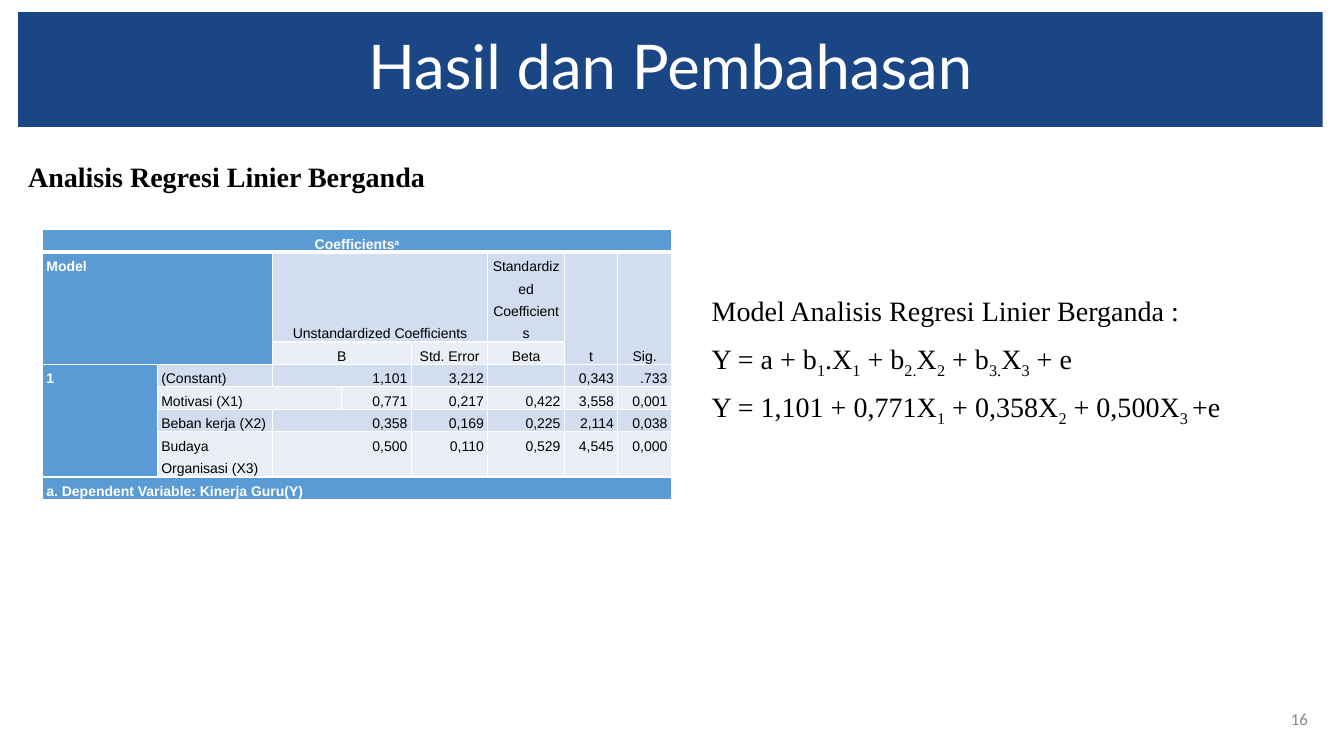
from lxml.etree import SubElement
from pptx import Presentation
from pptx.dml.color import RGBColor
from pptx.enum.shapes import MSO_SHAPE as Shape
from pptx.enum.text import MSO_ANCHOR as Anchor, PP_ALIGN as Align
from pptx.oxml.ns import qn
from pptx.util import Inches, Pt

NAVY, BLUE, PALE, PALER = "1B4685", "5B9BD5", "D2DEEF", "EAEFF7"
WHITE, BLACK, GREY = "FFFFFF", "000000", "888888"
SERIF = "Times New Roman"


def color(value):
    return RGBColor.from_string(value)


def paint(target, value):
    target.fill.solid()
    target.fill.fore_color.rgb = color(value)


def write(paragraph, text, *, size, font, ink=BLACK, bold=False, align=Align.LEFT,
          spacing=None, before=0, indent=0, right_indent=0, baseline=-25):
    """Fill a paragraph; pieces between bars are shifted by baseline percent."""
    paragraph.alignment = align
    paragraph.line_spacing = spacing
    paragraph.space_before = Pt(before)
    properties = paragraph._p.get_or_add_pPr()
    properties.set("marL", str(Inches(indent)))
    properties.set("marR", str(Inches(right_indent)))
    properties.set("indent", "0")
    for number, piece in enumerate(text.split("|")):
        if not piece:
            continue
        run = paragraph.add_run()
        run.text = piece
        run.font.name, run.font.size, run.font.bold = font, Pt(size), bold
        run.font.color.rgb = color(ink)
        if number % 2:
            run.font._element.set("baseline", str(baseline * 1000))


def set_border(cell, side, points):
    line = SubElement(cell._tc.get_or_add_tcPr(), qn(f"a:ln{side}"), w=str(Pt(points)))
    fill = SubElement(line, qn("a:solidFill"))
    SubElement(fill, qn("a:srgbClr"), val=WHITE)


class SlideBuilder:
    """Places elements on a slide divided into 100 columns and 100 rows."""

    def __init__(self, presentation):
        self.column = presentation.slide_width / 100
        self.row = presentation.slide_height / 100
        self.slide = presentation.slides.add_slide(presentation.slide_layouts[6])

    def place(self, left, top, width, height):
        return (int(left * self.column), int(top * self.row),
                int(width * self.column), int(height * self.row))

    def banner(self, box, text, **style):
        shape = self.slide.shapes.add_shape(Shape.RECTANGLE, *self.place(*box))
        shape.shadow.inherit = False
        paint(shape, NAVY)
        shape.line.fill.background()
        shape.text_frame.vertical_anchor = Anchor.MIDDLE
        write(shape.text_frame.paragraphs[0], text, **style)

    def text(self, box, lines, anchor=Anchor.TOP, wrap=True, before=0, **style):
        frame = self.slide.shapes.add_textbox(*self.place(*box)).text_frame
        frame.word_wrap, frame.vertical_anchor = wrap, anchor
        for number, line in enumerate(lines):
            paragraph = frame.add_paragraph() if number else frame.paragraphs[0]
            write(paragraph, line, before=before if number else 0, **style)

    def table(self, left, top, columns, rows):
        box = self.place(left, top, sum(columns), sum(rows))
        table = self.slide.shapes.add_table(len(rows), len(columns), *box).table
        table.first_row = table.horz_banding = False
        for column, width in zip(table.columns, columns):
            column.width = int(width * self.column)
        for row, height in zip(table.rows, rows):
            row.height = int(height * self.row)
        for row_index, row in enumerate(table.rows):
            for cell in row.cells:
                thick_side = {0: "B", 1: "T"}.get(row_index)
                for side in "LRTB":
                    set_border(cell, side, 3 if side == thick_side else 1)
        return table

    def cell(self, table, row, column, text, fill, span=(1, 1), anchor=Anchor.TOP, **style):
        cell = table.cell(row, column)
        if span != (1, 1):
            cell.merge(table.cell(row + span[0] - 1, column + span[1] - 1))
        cell.margin_left = cell.margin_right = cell.margin_top = cell.margin_bottom = 0
        cell.vertical_anchor = anchor
        paint(cell, fill)
        paragraph = cell.text_frame.paragraphs[0]
        paragraph.font.size = Pt(10)
        write(paragraph, text, size=10, font="Arial", spacing=Pt(16),
              indent=0.04, right_indent=0.04, **style)


def add_coefficients(builder):
    table = builder.table(3.15, 30.4, [8.55, 8.55, 5.18, 5.18, 5.7, 5.7, 3.98, 3.98],
                          [2.93, 11.87, 2.93, 2.93, 2.93, 2.93, 6, 2.93])
    strong = dict(fill=BLUE, ink=WHITE, bold=True)
    builder.cell(table, 0, 0, "Coefficients|a|", span=(1, 8), anchor=Anchor.MIDDLE,
                 align=Align.CENTER, baseline=30, **strong)
    builder.cell(table, 1, 0, "Model", span=(2, 2), **strong)
    builder.cell(table, 3, 0, "1", span=(4, 1), **strong)
    builder.cell(table, 7, 0, "a. Dependent Variable: Kinerja Guru(Y)", span=(1, 8), **strong)

    headings = [
        (1, 2, "Unstandardized Coefficients", PALE, (1, 3)),
        (1, 5, "Standardized Coefficients", PALE, (1, 1)),
        (1, 6, "t", PALE, (2, 1)),
        (1, 7, "Sig.", PALE, (2, 1)),
        (2, 2, "B", PALER, (1, 2)),
        (2, 4, "Std. Error", PALER, (1, 1)),
        (2, 5, "Beta", PALER, (1, 1)),
    ]
    for row, column, text, fill, span in headings:
        builder.cell(table, row, column, text, fill, span, Anchor.BOTTOM, align=Align.CENTER)

    # The third entry is the number of columns that the label spans.
    predictors = [
        ("(Constant)", ["1,101", "3,212", "", "0,343", ".733"], 1),
        ("Motivasi (X1)", ["0,771", "0,217", "0,422", "3,558", "0,001"], 2),
        ("Beban kerja (X2)", ["0,358", "0,169", "0,225", "2,114", "0,038"], 1),
        ("Budaya Organisasi (X3)", ["0,500", "0,110", "0,529", "4,545", "0,000"], 1),
    ]
    for row, (label, values, label_span) in enumerate(predictors, 3):
        fill = PALE if row % 2 else PALER
        builder.cell(table, row, 1, label, fill, (1, label_span))
        builder.cell(table, row, 1 + label_span, values[0], fill, (1, 3 - label_span),
                     align=Align.RIGHT)
        for column, value in enumerate(values[1:], 4):
            builder.cell(table, row, column, value, fill, align=Align.RIGHT)


def main():
    presentation = Presentation()
    presentation.slide_width, presentation.slide_height = Inches(13.33), Inches(7.5)
    builder = SlideBuilder(presentation)
    builder.text((93.77, 92.4, 4.28, 5.33), ["16"], Anchor.MIDDLE,
                 size=12, font="Calibri", ink=GREY, align=Align.RIGHT)
    builder.banner((1.35, 1.6, 97.07, 15.2), "Hasil dan Pembahasan", size=44,
                   font="Lato", ink=WHITE, align=Align.CENTER, spacing=0.9)
    builder.text((1.35, 20.4, 31.36, 5.87), ["Analisis Regresi Linier Berganda"],
                 wrap=False, size=20, font=SERIF, bold=True, align=Align.JUSTIFY)
    add_coefficients(builder)
    builder.text((51.76, 38.67, 40.66, 13.2), [
        "Model Analisis Regresi Linier Berganda :",
        "Y = a + b|1|.X|1| + b|2.|X|2| + b|3.|X|3| + e",
        "Y = 1,101 + 0,771X|1| + 0,358X|2| + 0,500X|3 |+e",
    ], size=20, font=SERIF, align=Align.JUSTIFY, spacing=0.9, before=10, indent=0.06)
    presentation.save("out.pptx")


if __name__ == "__main__":
    main()
